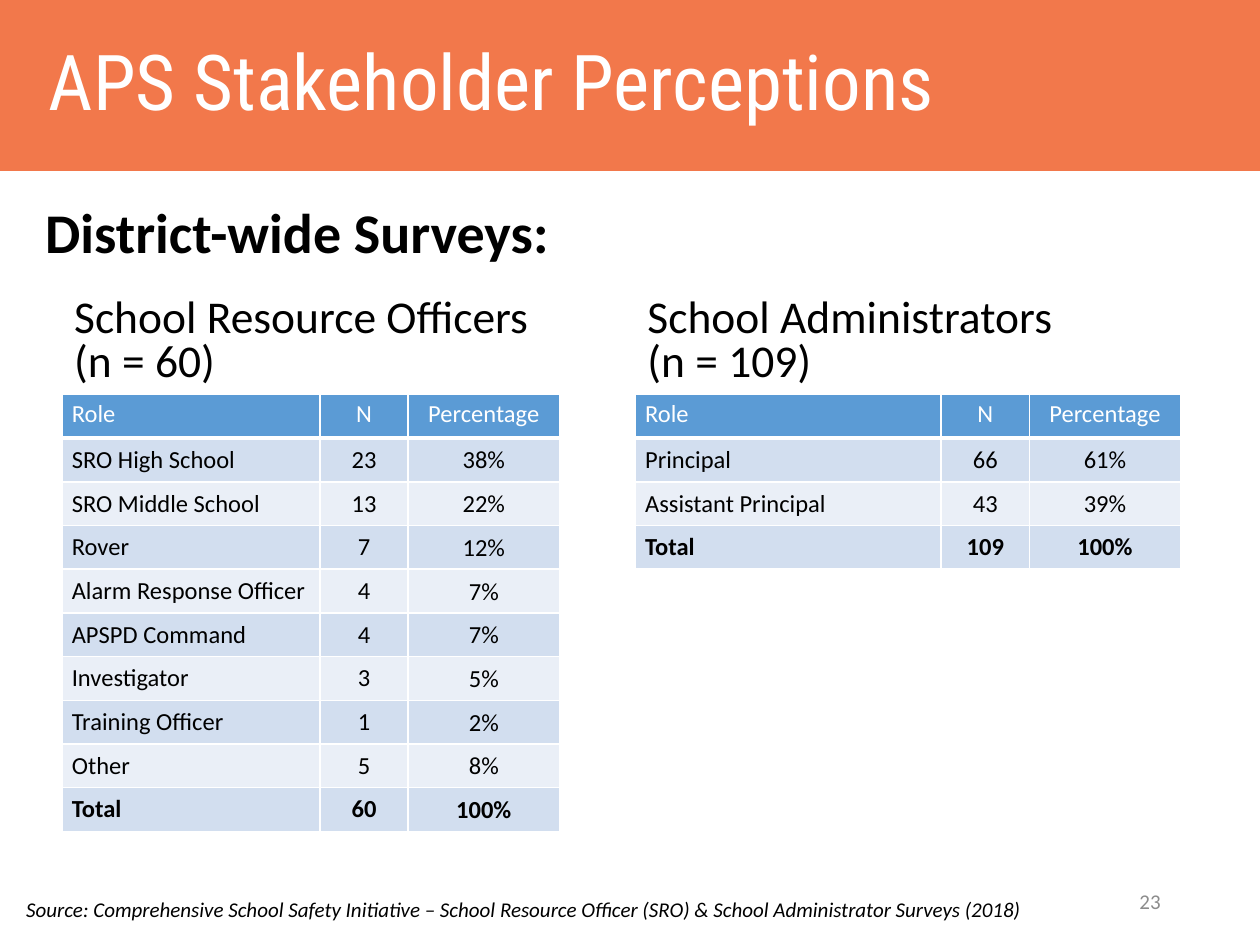
import pptx
import pptx.util
import pptx.dml.color
import pptx.enum.shapes
import pptx.enum.text
from dataclasses import dataclass
from lxml import etree

Inches = pptx.util.Inches
Pt = pptx.util.Pt
RGB = pptx.dml.color.RGBColor.from_string
ALIGN = pptx.enum.text.PP_ALIGN
ANCHOR = pptx.enum.text.MSO_ANCHOR
A = "http://schemas.openxmlformats.org/drawingml/2006/main"


@dataclass(frozen=True)
class Theme:
    banner: str = "F2784B"
    header: str = "5B9BD5"
    bands: tuple = ("D2DEEF", "EAEFF7")
    white: str = "FFFFFF"
    black: str = "000000"
    grey: str = "8C8C8C"
    display: str = "Roboto Condensed"
    body: str = "Calibri"
    title: int = 44
    heading: int = 32
    caption: int = 26
    cell: int = 14
    small: int = 12


T = Theme()


def write(tf, text, size, color=T.black, font=T.body, bold=False, italic=False,
          align=ALIGN.LEFT, anchor=ANCHOR.TOP, spacing=None, before=None):
    """Put one formatted paragraph in a text frame; a newline is a line break."""
    tf.word_wrap = True
    tf.vertical_anchor = anchor
    p = tf.paragraphs[0]
    p.text = text
    p.alignment = align
    p.line_spacing = spacing
    p.space_before = before
    for r in p.runs:
        r.font.name = font
        r.font.size = Pt(size)
        r.font.bold = bold
        r.font.italic = italic
        r.font.color.rgb = RGB(color)


def set_borders(cell, bottom):
    """Give a cell white edges, 1 pt except for the bottom one."""
    tc_pr = cell._tc.get_or_add_tcPr()
    for side, width in (("L", 1), ("R", 1), ("T", 1), ("B", bottom)):
        ln = etree.SubElement(tc_pr, f"{{{A}}}ln{side}", w=str(Pt(width)))
        fill = etree.SubElement(ln, f"{{{A}}}solidFill")
        etree.SubElement(fill, f"{{{A}}}srgbClr", val=T.white)


prs = pptx.Presentation()
prs.slide_width = Inches(10)
prs.slide_height = Inches(7.5)
s = prs.slides.add_slide(prs.slide_layouts[6])

# Title banner
banner = s.shapes.add_group_shape()
sp = banner.shapes.add_shape(pptx.enum.shapes.MSO_SHAPE.RECTANGLE,
                             0, 0, Inches(10), Inches(1.35))
sp.shadow.inherit = False
sp.fill.solid()
sp.fill.fore_color.rgb = RGB(T.banner)
sp.line.color.rgb = RGB(T.banner)
sp.line.width = Pt(1)
title = banner.shapes.add_textbox(Inches(0.29), 0, Inches(9.27), Inches(1.35))
write(title.text_frame, "APS Stakeholder Perceptions", T.title, color=T.white,
      font=T.display, anchor=ANCHOR.MIDDLE, spacing=0.9)

heading = s.shapes.add_textbox(Inches(0.26), Inches(1.52), Inches(9.48), Inches(5.25))
write(heading.text_frame, "District-wide Surveys:", T.heading, bold=True, before=Pt(10))

# Survey tables: caption, left edge, role column width, percentage cell margins, rows
WIDE = (0.08, 0.04, 0.08, 0.04)
TIGHT = (0.01, 0.01, 0.01, 0)
HEADER = ("Role", "N", "Percentage")
ROW_HEIGHT = Inches(3.47) // 10
surveys = [
    ("School Resource Officers \n(n = 60)", 0.49, 2.05, TIGHT, [
        ("SRO High School", "23", "38%"),
        ("SRO Middle School", "13", "22%"),
        ("Rover", "7", "12%"),
        ("Alarm Response Officer", "4", "7%"),
        ("APSPD Command", "4", "7%"),
        ("Investigator", "3", "5%"),
        ("Training Officer", "1", "2%"),
        ("Other", "5", "8%"),
        ("Total", "60", "100%"),
    ]),
    ("School Administrators \n(n = 109)", 5.04, 2.43, WIDE, [
        ("Principal", "66", "61%"),
        ("Assistant Principal", "43", "39%"),
        ("Total", "109", "100%"),
    ]),
]
for caption, left, role_width, percent_margins, rows in surveys:
    box = s.shapes.add_textbox(Inches(left), Inches(2.32), Inches(3.95), Inches(0.81))
    write(box.text_frame, caption, T.caption, spacing=0.8)

    widths = (role_width, 0.7, 1.2)
    table = s.shapes.add_table(len(rows) + 1, 3, Inches(left), Inches(3.13),
                               Inches(sum(widths)), ROW_HEIGHT * (len(rows) + 1)).table
    for column, width in zip(table.columns, widths):
        column.width = Inches(width)
    for i, values in enumerate([HEADER] + rows):
        table.rows[i].height = ROW_HEIGHT
        is_header = i == 0
        for j, value in enumerate(values):
            cell = table.cell(i, j)
            margins = percent_margins if j == 2 and not is_header else WIDE
            (cell.margin_left, cell.margin_top,
             cell.margin_right, cell.margin_bottom) = map(Inches, margins)
            cell.vertical_anchor = ANCHOR.TOP if is_header else ANCHOR.MIDDLE
            set_borders(cell, bottom=3 if is_header else 1)
            cell.fill.solid()
            cell.fill.fore_color.rgb = RGB(T.header if is_header else T.bands[(i - 1) % 2])
            write(cell.text_frame, value, T.cell,
                  color=T.white if is_header else T.black,
                  bold=values[0] == "Total",
                  align=ALIGN.CENTER if j else ALIGN.LEFT)

# Source line and page number
source = s.shapes.add_textbox(Inches(0.11), Inches(7.07), Inches(9.04), Inches(0.3))
write(source.text_frame,
      "Source: Comprehensive School Safety Initiative – School Resource Officer (SRO) "
      "& School Administrator Surveys (2018)", T.small, italic=True)
number = s.shapes.add_textbox(Inches(7.06), Inches(6.95), Inches(2.25), Inches(0.4))
write(number.text_frame, "23", T.small, color=T.grey, align=ALIGN.RIGHT,
      anchor=ANCHOR.MIDDLE)

prs.save("out.pptx")
